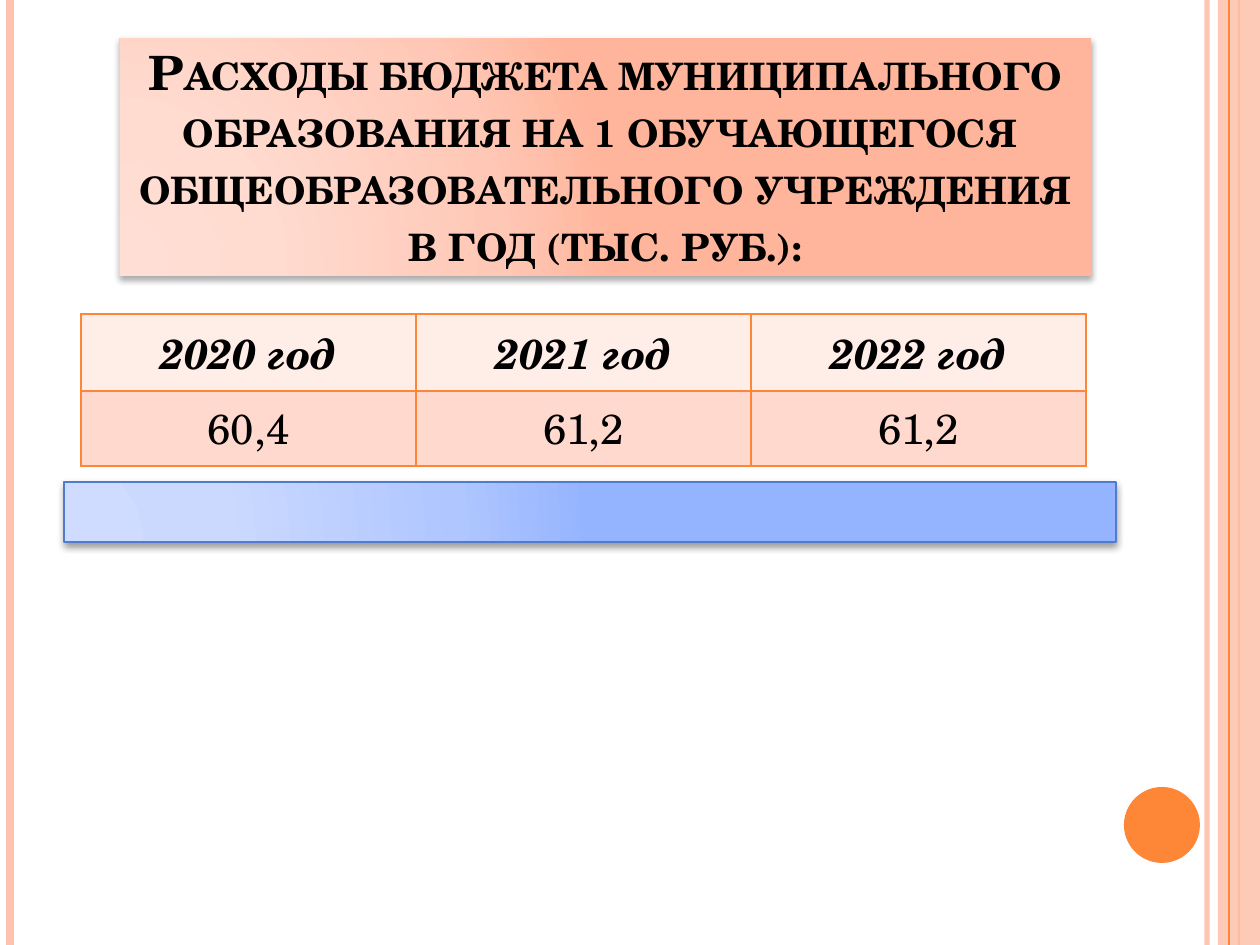
from dataclasses import dataclass

from lxml import etree
from pptx import Presentation
from pptx import util as u
from pptx.dml.color import RGBColor
from pptx.enum import shapes, text
from pptx.oxml import ns

PX = 914400 / 126
FONT = "TeX Gyre Schola"
ORANGE = "FE8637"
PINK = "FEC3AE"
BLACK = "000000"


@dataclass(frozen=True)
class Box:
    left: int
    top: int
    width: int
    height: int

    def emu(self) -> list[int]:
        return [px(v) for v in (self.left, self.top, self.width, self.height)]


@dataclass(frozen=True)
class Stripe:
    x: int
    color: str
    weight: float
    opacity: int = 100


@dataclass(frozen=True)
class Shadow:
    opacity: int
    blur: float
    distance: float


@dataclass(frozen=True)
class TableRow:
    values: tuple[str, ...]
    fill: str
    emphasis: bool
    anchor: text.MSO_ANCHOR


SLIDE = Box(0, 0, 1260, 945)
TITLE = Box(120, 38, 971, 238)
TABLE = Box(81, 314, 1005, 150)
BAND = Box(64, 482, 1052, 60)
SIDE_PANEL = Box(1218, 0, 42, 945)
DISC = Box(1124, 787, 76, 76)

LEFT_STRIPES = (
    Stripe(1207, PINK, 3, 93),
    Stripe(10, PINK, 4.5),
    Stripe(1239, ORANGE, 1.5),
)
PANEL_STRIPE = Stripe(1229, ORANGE, 0.75)

GRADIENT_POSITIONS = (0, 30, 75, 100)
TITLE_COLORS = ("FFDED5", "FFDBD0", "FFC8B6", "FFB59B")
BAND_COLORS = ("CFDCFF", "CBD9FF", "AFC6FF", "95B4FF")

TITLE_TEXT = (
    "Расходы бюджета муниципального образования на 1 обучающегося  "
    "общеобразовательного учреждения в год (тыс. руб.):"
)
ROWS = (
    TableRow(("2020 год", "2021 год", "2022 год"), "FFEDE8", True, text.MSO_ANCHOR.MIDDLE),
    TableRow(("60,4", "61,2", "61,2"), "FFD9CE", False, text.MSO_ANCHOR.TOP),
)


def px(value: float) -> int:
    return round(value * PX)


def rgb(value: str) -> RGBColor:
    return RGBColor.from_string(value)


def child(parent, tag: str, **attributes):
    values = {name: str(value) for name, value in attributes.items()}
    return etree.SubElement(parent, ns.qn(tag), values)


def set_opacity(fill_format, percent: int) -> None:
    color = fill_format._xPr.find(ns.qn("a:solidFill"))[0]
    child(color, "a:alpha", val=percent * 1000)


def add_stripe(slide, stripe: Stripe) -> None:
    x = px(stripe.x)
    line = slide.shapes.add_connector(
        shapes.MSO_CONNECTOR.STRAIGHT, x, 0, x, px(SLIDE.height)
    )
    line.line.color.rgb = rgb(stripe.color)
    line.line.width = u.Pt(stripe.weight)
    if stripe.opacity < 100:
        set_opacity(line.line.fill, stripe.opacity)
    child(line._element.spPr, "a:effectLst")


def add_plain(slide, kind: shapes.MSO_SHAPE, box: Box, color: str):
    shape = slide.shapes.add_shape(kind, *box.emu())
    shape.shadow.inherit = False
    shape.fill.solid()
    shape.fill.fore_color.rgb = rgb(color)
    shape.line.fill.background()
    return shape


def set_radial_gradient(shape, colors: tuple[str, ...]) -> None:
    shape.fill.gradient()
    gradient = shape._element.spPr.find(ns.qn("a:gradFill"))
    for old in list(gradient):
        gradient.remove(old)
    stops = child(gradient, "a:gsLst")
    for position, color in zip(GRADIENT_POSITIONS, colors):
        stop = child(stops, "a:gs", pos=position * 1000)
        child(stop, "a:srgbClr", val=color)
    radial = child(gradient, "a:path", path="circle")
    child(radial, "a:fillToRect", l=5000, t=100000, r=120000, b=10000)


def set_shadow(shape, shadow: Shadow) -> None:
    shape.shadow.inherit = False
    effects = shape._element.spPr.find(ns.qn("a:effectLst"))
    outer = child(
        effects, "a:outerShdw", blurRad=u.Pt(shadow.blur), dist=u.Pt(shadow.distance),
        dir=90 * 60000, algn="ctr", rotWithShape=0,
    )
    color = child(outer, "a:srgbClr", val=BLACK)
    child(color, "a:alpha", val=shadow.opacity * 1000)


def write_centered(frame, content: str, size: int, bold: bool, italic: bool):
    paragraph = frame.paragraphs[0]
    paragraph.alignment = text.PP_ALIGN.CENTER
    run = paragraph.add_run()
    run.text = content
    run.font.name = FONT
    run.font.size = u.Pt(size)
    run.font.bold = bold
    run.font.italic = italic
    run.font.color.rgb = rgb(BLACK)
    return run


def add_title(slide) -> None:
    title = slide.shapes.title
    title.left, title.top, title.width, title.height = TITLE.emu()
    set_radial_gradient(title, TITLE_COLORS)
    set_shadow(title, Shadow(32, 3.5, 2.2))
    frame = title.text_frame
    frame.word_wrap = True
    frame.auto_size = text.MSO_AUTO_SIZE.NONE
    frame.vertical_anchor = text.MSO_ANCHOR.MIDDLE
    run = write_centered(frame, TITLE_TEXT, 27, True, False)
    run.font._element.set("cap", "small")


def set_borders(cell) -> None:
    properties = cell._tc.get_or_add_tcPr()
    for index, side in enumerate(("a:lnL", "a:lnR", "a:lnT", "a:lnB")):
        border = etree.Element(ns.qn(side), {"w": str(u.Pt(1))})
        child(child(border, "a:solidFill"), "a:srgbClr", val=ORANGE)
        properties.insert(index, border)


def add_expense_table(slide) -> None:
    columns = len(ROWS[0].values)
    table = slide.shapes.add_table(len(ROWS), columns, *TABLE.emu()).table
    table.first_row = False
    table.horz_banding = False
    for row_index, row in enumerate(ROWS):
        for column_index, value in enumerate(row.values):
            cell = table.cell(row_index, column_index)
            cell.fill.solid()
            cell.fill.fore_color.rgb = rgb(row.fill)
            cell.vertical_anchor = row.anchor
            set_borders(cell)
            write_centered(cell.text_frame, value, 24, row.emphasis, row.emphasis)


def add_band(slide) -> None:
    band = add_plain(slide, shapes.MSO_SHAPE.RECTANGLE, BAND, BAND_COLORS[0])
    set_radial_gradient(band, BAND_COLORS)
    band.line.color.rgb = rgb("4F7CCF")
    band.line.width = u.Pt(1)
    set_shadow(band, Shadow(40, 4, 2))


def main() -> None:
    presentation = Presentation()
    presentation.slide_width = px(SLIDE.width)
    presentation.slide_height = px(SLIDE.height)
    slide = presentation.slides.add_slide(presentation.slide_layouts[5])
    for stripe in LEFT_STRIPES:
        add_stripe(slide, stripe)
    panel = add_plain(slide, shapes.MSO_SHAPE.RECTANGLE, SIDE_PANEL, PINK)
    set_opacity(panel.fill, 87)
    add_stripe(slide, PANEL_STRIPE)
    add_plain(slide, shapes.MSO_SHAPE.OVAL, DISC, ORANGE)
    add_title(slide)
    add_expense_table(slide)
    add_band(slide)
    presentation.save("out.pptx")


if __name__ == "__main__":
    main()
